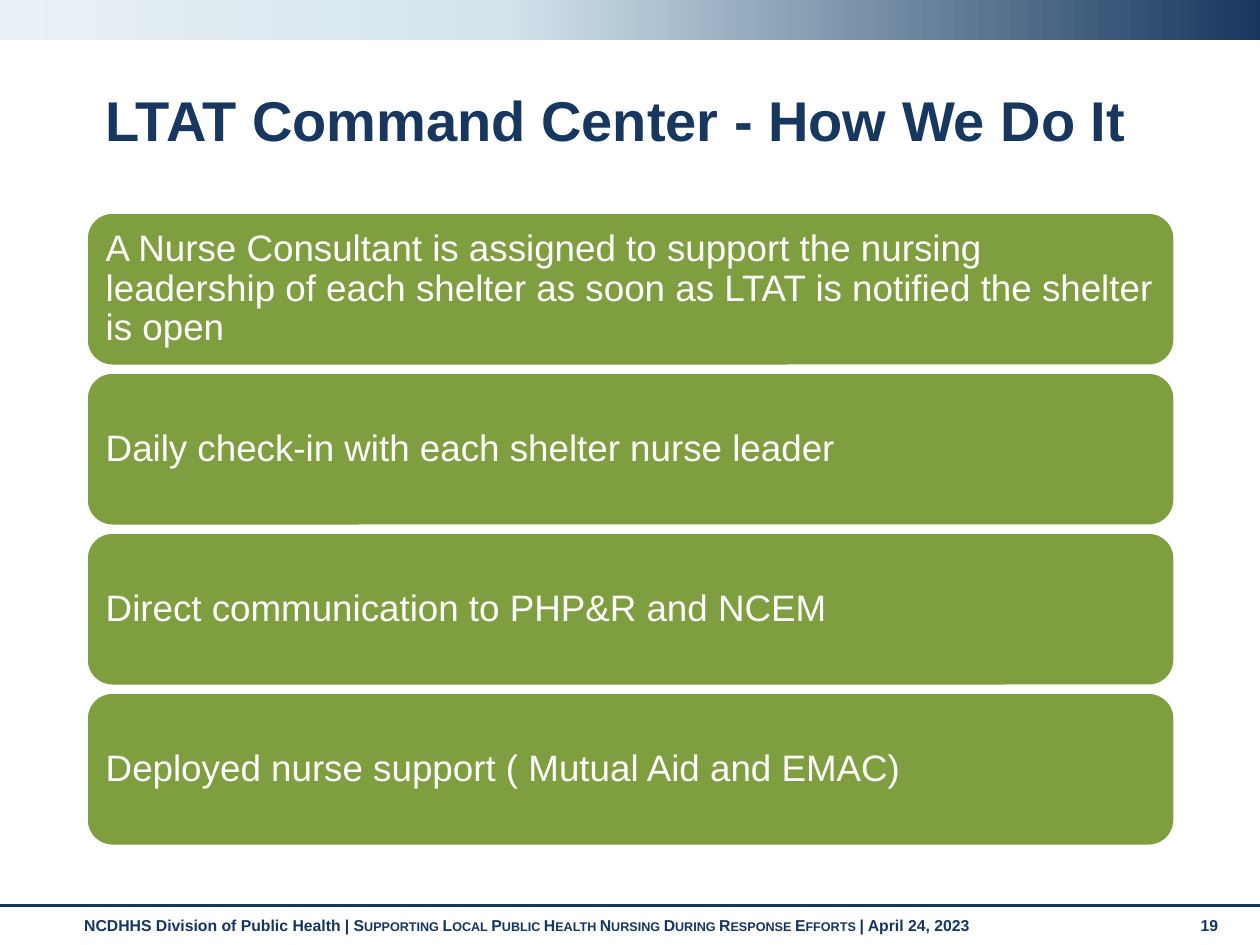
import pptx
import pptx.dml.color
import pptx.enum.shapes
import pptx.enum.text
import pptx.oxml
import pptx.oxml.ns
import pptx.util
from pptx.util import Inches

RGBColor = pptx.dml.color.RGBColor
NAVY = RGBColor(0x17, 0x37, 0x5E)
FOOTER_NAVY = RGBColor(0x15, 0x36, 0x5E)
PALE_BLUE = RGBColor(0xD3, 0xE4, 0xED)
ICE = RGBColor(0xE9, 0xF1, 0xF6)
GREEN = RGBColor(0x7F, 0x9E, 0x3F)
WHITE = RGBColor(0xFF, 0xFF, 0xFF)

ANCHOR = pptx.enum.text.MSO_ANCHOR
SHAPES = pptx.enum.shapes.MSO_SHAPE

STEPS = [
    "A Nurse Consultant is assigned to support the nursing leadership of each "
    "shelter as soon as LTAT is notified the shelter is open",
    "Daily check-in with each shelter nurse leader",
    "Direct communication to PHP&R and NCEM",
    "Deployed nurse support ( Mutual Aid and EMAC)",
]
STEP_TOP, STEP_HEIGHT, STEP_PITCH = 1.69, 1.21, 1.27


class SlideBuilder:
    font_name = "Arial"
    formats = {
        "title": {"size": pptx.util.Pt(32), "bold": True, "color": NAVY},
        "step": {"size": pptx.util.Pt(21), "bold": False, "color": WHITE},
        "footer": {"size": pptx.util.Pt(9), "bold": True, "color": FOOTER_NAVY},
    }

    def __init__(self, slide):
        self.slide = slide

    def set_text(self, shape, runs, style, anchor, line_spacing=1.0):
        """Fill a shape with one left-aligned paragraph of (text, small caps) runs."""
        frame = shape.text_frame
        frame.word_wrap = True
        frame.auto_size = pptx.enum.text.MSO_AUTO_SIZE.NONE
        frame.vertical_anchor = anchor
        paragraph = frame.paragraphs[0]
        paragraph.alignment = pptx.enum.text.PP_ALIGN.LEFT
        paragraph.line_spacing = line_spacing
        for text, small_caps in runs:
            run = paragraph.add_run()
            run.text = text
            run.font.name = self.font_name
            for name, value in self.formats[style].items():
                if name == "color":
                    run.font.color.rgb = value
                else:
                    setattr(run.font, name, value)
            if small_caps:
                run.font._element.set("cap", "small")

    def title(self, text, left, top, width, height):
        shape = self.slide.shapes.title
        shape.left, shape.top = Inches(left), Inches(top)
        shape.width, shape.height = Inches(width), Inches(height)
        self.set_text(shape, [(text, False)], "title", ANCHOR.MIDDLE, 0.9)

    def box(self, kind, left, top, width, height):
        shape = self.slide.shapes.add_shape(
            kind, Inches(left), Inches(top), Inches(width), Inches(height))
        shape.shadow.inherit = False
        return shape

    def gradient_band(self, left, top, width, height, stops):
        band = self.box(SHAPES.RECTANGLE, left, top, width, height)
        band.line.fill.background()
        band.fill.gradient()
        band.fill.gradient_angle = 180
        stop_list = band._element.spPr.find(".//" + pptx.oxml.ns.qn("a:gsLst"))
        for stop in list(stop_list):
            stop_list.remove(stop)
        for percent, color in stops:
            stop_list.append(pptx.oxml.parse_xml(
                f'<a:gs {pptx.oxml.ns.nsdecls("a")} pos="{percent * 1000}">'
                f'<a:srgbClr val="{color}"/></a:gs>'))

    def step(self, text, left, top, width, height):
        shape = self.box(SHAPES.ROUNDED_RECTANGLE, left, top, width, height)
        shape.fill.solid()
        shape.fill.fore_color.rgb = GREEN
        shape.line.color.rgb = WHITE
        shape.line.width = pptx.util.Pt(1)
        for side in ("left", "top", "right", "bottom"):
            setattr(shape.text_frame, f"margin_{side}", Inches(0.09))
        self.set_text(shape, [(text, False)], "step", ANCHOR.MIDDLE, 0.9)

    def rule(self, left, right, y):
        line = self.slide.shapes.add_connector(
            pptx.enum.shapes.MSO_CONNECTOR.STRAIGHT,
            Inches(left), Inches(y), Inches(right), Inches(y))
        line.line.color.rgb = NAVY
        line.line.width = pptx.util.Pt(1.75)
        line._element.spPr.append(pptx.oxml.parse_xml(
            f'<a:effectLst {pptx.oxml.ns.nsdecls("a")}/>'))

    def footer(self, runs, left, width):
        shape = self.slide.shapes.add_textbox(
            Inches(left), Inches(7.22), Inches(width), Inches(0.3))
        self.set_text(shape, runs, "footer", ANCHOR.TOP)


def main():
    presentation = pptx.Presentation()
    presentation.slide_width, presentation.slide_height = Inches(10), Inches(7.5)
    builder = SlideBuilder(
        presentation.slides.add_slide(presentation.slide_layouts[5]))

    builder.footer([
        ("NCDHHS Division of Public Health | ", False),
        ("Supporting Local Public Health Nursing During Response Efforts ", True),
        ("| April 24, 2023", False),
    ], 0.57, 8.74)
    builder.footer([("19", False)], 9.43, 0.44)
    builder.gradient_band(0, 0, 10, 0.32, [(0, NAVY), (60, PALE_BLUE), (100, ICE)])
    builder.rule(0, 10, 7.19)
    builder.title("LTAT Command Center - How We Do It", 0.74, 0.68, 8.58, 0.6)
    for index, text in enumerate(STEPS):
        builder.step(text, 0.69, STEP_TOP + index * STEP_PITCH, 8.63, STEP_HEIGHT)

    presentation.save("out.pptx")


if __name__ == "__main__":
    main()
